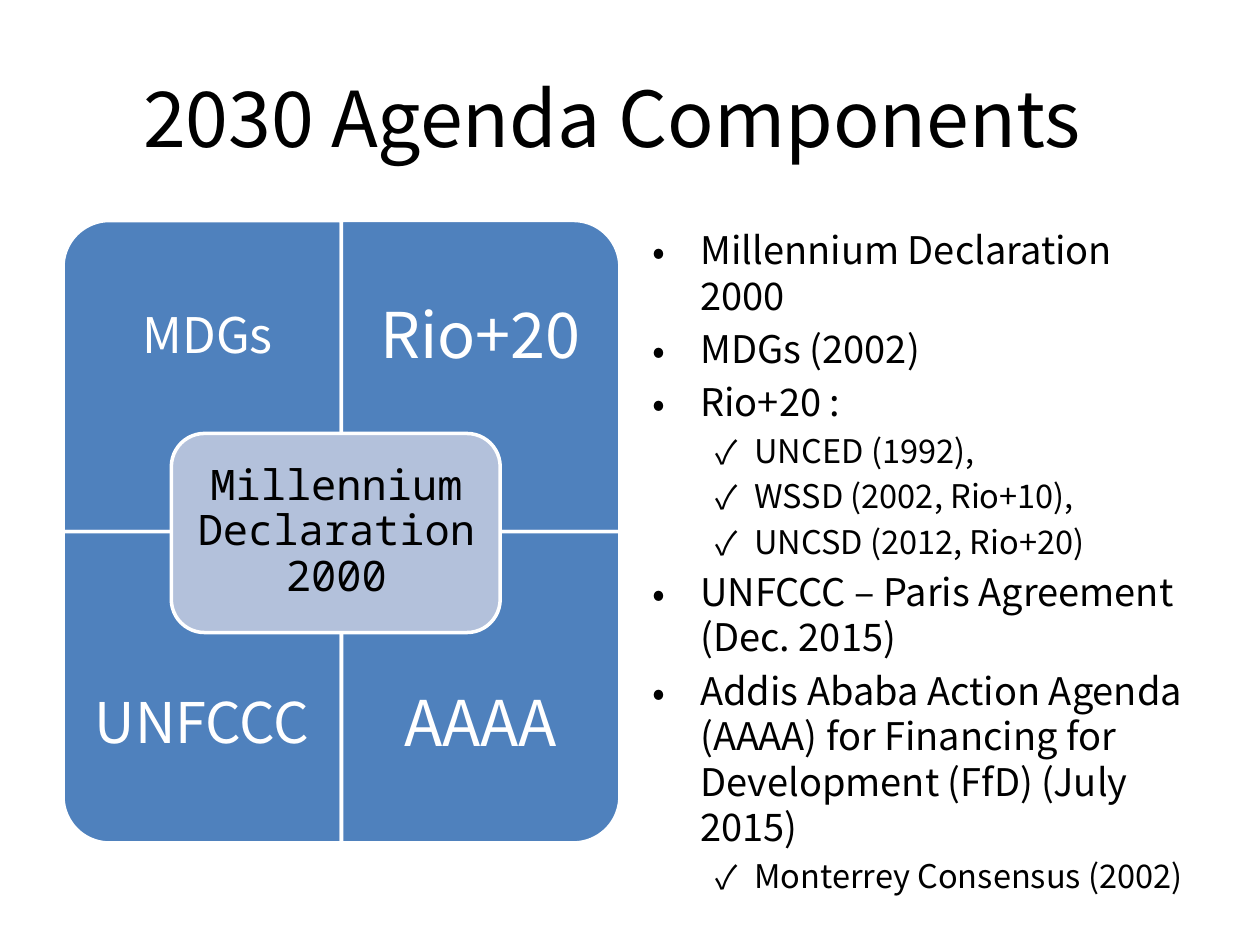
from dataclasses import dataclass

import pptx
import pptx.dml.color
import pptx.enum.shapes
import pptx.enum.text
import pptx.oxml
import pptx.oxml.ns
import pptx.util

Inches = pptx.util.Inches
Pt = pptx.util.Pt
SHAPES = pptx.enum.shapes.MSO_SHAPE
ALIGN = pptx.enum.text.PP_ALIGN
ANCHOR = pptx.enum.text.MSO_ANCHOR


@dataclass(frozen=True)
class Theme:
    font: str = "Noto Sans CJK KR"
    mono: str = "Noto Sans Mono"
    black: str = "000000"
    white: str = "FFFFFF"
    blue: str = "4F81BD"
    pale: str = "B3C1DB"
    title_size: float = 44
    center_size: float = 24
    body_sizes: tuple = (21.7, 18.6)
    outline: float = 2


def write(paragraph, text, *, size, font, color, align=ALIGN.LEFT, line=1.0, before=0):
    paragraph.alignment = align
    paragraph.line_spacing = line
    paragraph.space_before = Pt(before)
    run = paragraph.add_run()
    run.text = text
    run.font.size = Pt(size)
    run.font.name = font
    run.font.color.rgb = pptx.dml.color.RGBColor.from_string(color)


def set_bullet(paragraph, character, font, margin, hanging):
    properties = paragraph._p.get_or_add_pPr()
    properties.set("marL", str(Inches(margin)))
    properties.set("indent", str(-Inches(hanging)))
    namespace = pptx.oxml.ns.nsdecls("a")
    for xml in (f'<a:buFont {namespace} typeface="{font}"/>',
                f'<a:buChar {namespace} char="{character}"/>'):
        properties.append(pptx.oxml.parse_xml(xml))


class Board:
    def __init__(self, slide, theme):
        self.slide = slide
        self.theme = theme

    def frame(self, left, top, width, height, anchor=ANCHOR.MIDDLE,
              insets=(0.1, 0.05, 0.1, 0.05)):
        """Add a wrapping text box; insets run left, top, right, bottom."""
        box = self.slide.shapes.add_textbox(*map(Inches, (left, top, width, height)))
        frame = box.text_frame
        frame.word_wrap = True
        frame.vertical_anchor = anchor
        (frame.margin_left, frame.margin_top,
         frame.margin_right, frame.margin_bottom) = map(Inches, insets)
        return frame

    def label(self, text, bounds, insets, size, font=None, color=None, line=0.9):
        frame = self.frame(*bounds, insets=insets)
        write(frame.paragraphs[0], text, size=size, font=font or self.theme.font,
              color=color or self.theme.white, align=ALIGN.CENTER, line=line)

    def panel(self, kind, left, top, width, height, fill, rotation=0):
        """Add an outlined shape whose bounds are those seen after a quarter-turn rotation."""
        if rotation % 180:
            left, top = left + (width - height) / 2, top + (height - width) / 2
            width, height = height, width
        shape = self.slide.shapes.add_shape(
            kind, *map(Inches, (left, top, width, height)))
        shape.rotation = rotation
        shape.shadow.inherit = False
        shape.fill.solid()
        shape.fill.fore_color.rgb = pptx.dml.color.RGBColor.from_string(fill)
        shape.line.color.rgb = pptx.dml.color.RGBColor.from_string(self.theme.white)
        shape.line.width = Pt(self.theme.outline)

    def bullets(self, items, bounds):
        frame = self.frame(*bounds, anchor=ANCHOR.TOP)
        styles = (("•", 0.38, 0.38), ("✓", 0.81, 0.31))
        for index, (level, text) in enumerate(items):
            paragraph = frame.add_paragraph() if index else frame.paragraphs[0]
            paragraph.level = level
            size = self.theme.body_sizes[level]
            write(paragraph, text, size=size, font=self.theme.font,
                  color=self.theme.black, before=round(size * 0.2, 1))
            character, margin, hanging = styles[level]
            set_bullet(paragraph, character, self.theme.font, margin, hanging)


def draw_matrix(board):
    left, top, width, height = 0.5, 1.75, 2.21, 2.47
    text_height = 1.86
    # text, column, row, rotation, type size, inset, extra left inset
    quadrants = (
        ("MDGs", 0, 0, 270, 28, 0.22, 0.09),
        ("Rio+20", 1, 0, 0, 36, 0.28, 0),
        ("UNFCCC", 0, 1, 180, 32, 0.25, 0),
        ("AAAA", 1, 1, 90, 36, 0.28, 0),
    )
    for text, column, row, rotation, size, inset, shift in quadrants:
        x, y = left + column * width, top + row * height
        board.panel(SHAPES.ROUND_1_RECTANGLE, x, y, width, height,
                    board.theme.blue, rotation)
        text_top = y + row * (height - text_height)
        board.label(text, (x, text_top, width, text_height),
                    (inset + shift, inset, inset, inset), size)

    board.panel(SHAPES.ROUNDED_RECTANGLE, 1.36, 3.44, 2.61, 1.58, board.theme.pale)
    board.label("Millennium Declaration 2000", (1.44, 3.51, 2.46, 1.43), (0.1,) * 4,
                board.theme.center_size, board.theme.mono, board.theme.black)


def main():
    presentation = pptx.Presentation()
    presentation.slide_width = Inches(10)
    presentation.slide_height = Inches(7.5)
    theme = Theme()
    board = Board(presentation.slides.add_slide(presentation.slide_layouts[6]), theme)

    board.label("2030 Agenda Components", (0.5, 0.3, 9, 1.25), (0.1, 0.05, 0.38, 0.05),
                theme.title_size, color=theme.black, line=1.0)
    draw_matrix(board)
    board.bullets((
        (0, "Millennium Declaration 2000"),
        (0, "MDGs (2002)"),
        (0, "Rio+20 :"),
        (1, "UNCED (1992),"),
        (1, "WSSD (2002, Rio+10),"),
        (1, "UNCSD (2012, Rio+20)"),
        (0, "UNFCCC – Paris Agreement (Dec. 2015)"),
        (0, "Addis Ababa Action Agenda (AAAA) for Financing for Development (FfD) "
            "(July 2015)"),
        (1, "Monterrey Consensus (2002)"),
    ), (5.08, 1.75, 4.42, 4.95))
    presentation.save("out.pptx")


if __name__ == "__main__":
    main()
